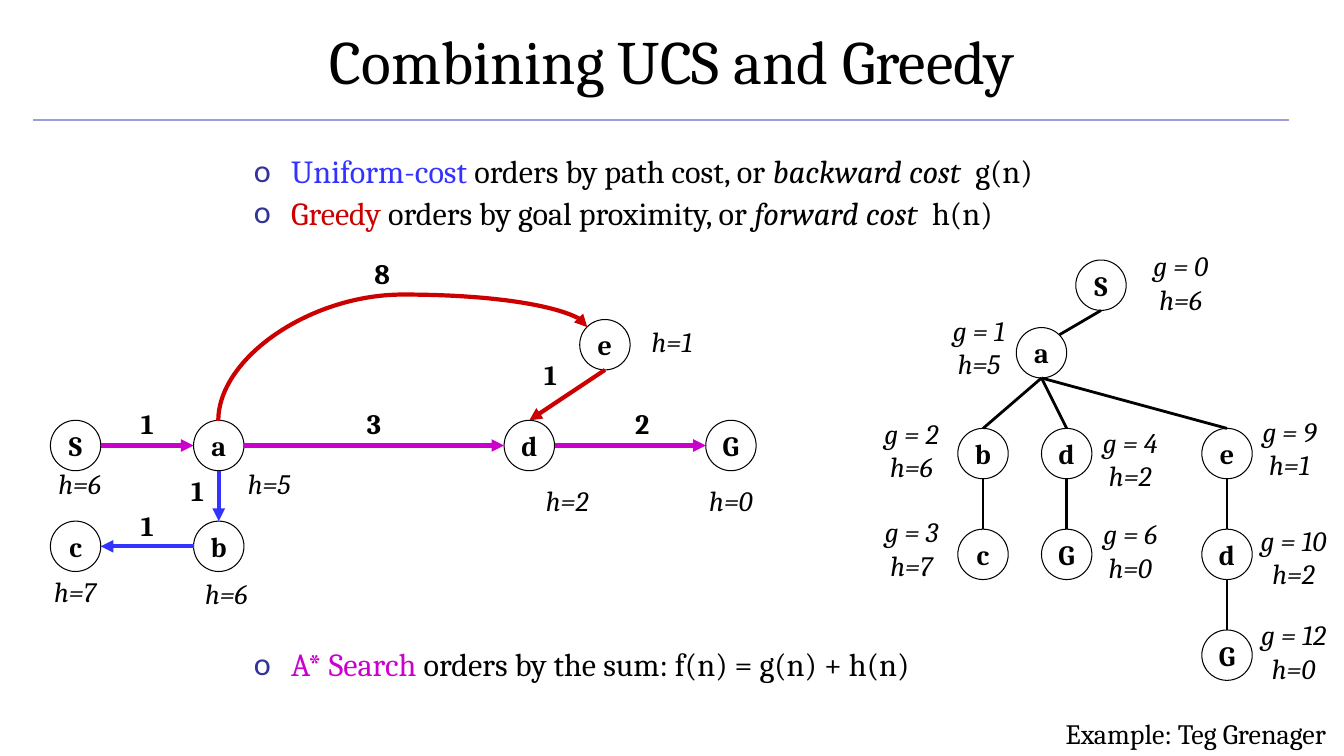
from dataclasses import dataclass

import pptx
import pptx.dml.color
import pptx.enum.shapes
import pptx.enum.text
import pptx.oxml
import pptx.oxml.ns
import pptx.util

Inches = pptx.util.Inches
Pt = pptx.util.Pt
Align = pptx.enum.text.PP_ALIGN
Anchor = pptx.enum.text.MSO_ANCHOR
Kind = pptx.enum.shapes.MSO_CONNECTOR


@dataclass(frozen=True)
class Theme:
    font: str = "Cambria"
    ink: str = "000000"
    paper: str = "FFFFFF"
    rule: str = "9C9CDF"
    bullet: str = "333399"
    blue: str = "3333FF"
    red: str = "CC0000"
    purple: str = "CC00CC"
    title: int = 44
    body: int = 23
    label: int = 20


THEME = Theme()
SIZE = 0.5  # diameter of a node
SIDES = {"top": (0, -0.25), "left": (-0.25, 0), "bottom": (0, 0.25),
         "right": (0.25, 0), "corner": (0.18, -0.18)}

# Nodes: left, top
GRAPH = {"S": (0.5, 4.17), "a": (1.92, 4.17), "d": (5, 4.17), "G": (7, 4.17),
         "c": (0.5, 5.17), "b": (1.92, 5.17), "e": (5.75, 3.17)}
ROWS = [4.25, 5.25, 6.25]
TREE = {"S": (10.67, 2.58), "a": (10.08, 3.25),
        "b": (9.5, ROWS[0]), "b c": (9.5, ROWS[1]),
        "d": (10.33, ROWS[0]), "d G": (10.33, ROWS[1]),
        "e": (11.92, ROWS[0]), "e d": (11.92, ROWS[1]), "e G": (11.92, ROWS[2])}

# Arrows: from, side, to, side, colour
ARROWS = [("a", "bottom", "b", "top", THEME.blue),
          ("b", "left", "c", "right", THEME.blue),
          ("e", "bottom", "d", "top", THEME.red),
          ("S", "right", "a", "left", THEME.purple),
          ("a", "right", "d", "left", THEME.purple),
          ("d", "right", "G", "left", THEME.purple)]
LINKS = [("S", "a", "corner"), ("a", "b", "top"), ("a", "d", "top"),
         ("a", "e", "top"), ("b", "b c", "top"), ("d", "d G", "top"),
         ("e", "e d", "top"), ("e d", "e G", "top")]

# Labels: text, left, top, width
COSTS = [("1", 1.17, 3.98, 0.58), ("8", 3.58, 2.5, 0.42), ("1", 1.17, 5, 0.58),
         ("1", 1.67, 4.65, 0.58), ("2", 6.08, 3.98, 0.58),
         ("3", 3.42, 3.98, 0.58), ("1", 5.17, 3.5, 0.58)]
GUESSES = [("h=5", 2.17, 4.58, 1), ("h=6", 1.83, 5.67, 0.83),
           ("h=2", 5.25, 4.75, 0.75), ("h=6", 0.33, 4.58, 0.92),
           ("h=0", 6.75, 4.75, 1), ("h=7", 0.33, 5.65, 0.83),
           ("h=1", 6.25, 3.17, 0.83)]
SCORES = [("g = 0 h=6", 11.25, 2.42, 0.92), ("g = 1 h=5", 9.25, 3.06, 0.92),
          ("g = 2 h=6", 8.58, 4.08, 0.92), ("g = 3 h=7", 8.58, 5.06, 0.92),
          ("g = 4 h=2", 10.75, 4.17, 0.92), ("g = 6 h=0", 10.75, 5.08, 0.92),
          ("g = 9 h=1", 12.33, 4.06, 0.92), ("g = 10 h=2", 12.33, 5.14, 1),
          ("g = 12 h=0", 12.33, 6.08, 1)]

# Bullets: runs of text, colour, italic
POINTS = [
    [("Uniform-cost ", THEME.blue, False),
     ("orders by path cost, or ", THEME.ink, False),
     ("backward cost  ", THEME.ink, True), ("g(n)", THEME.ink, False)],
    [("Greedy ", THEME.red, False),
     ("orders by goal proximity, or ", THEME.ink, False),
     ("forward cost  ", THEME.ink, True), ("h(n)", THEME.ink, False)]]
SUM = [[("A* Search", THEME.purple, False),
        (" orders by the sum: f(n) = g(n) + h(n)", THEME.ink, False)]]


def rgb(code):
    return pptx.dml.color.RGBColor.from_string(code)


def element(tag, **attrs):
    item = pptx.oxml.parse_xml(f"<a:{tag} {pptx.oxml.ns.nsdecls('a')}/>")
    for key, value in attrs.items():
        item.set(key, value)
    return item


def add_run(para, text, size, color=THEME.ink, bold=False, italic=False):
    run = para.add_run()
    run.text = text
    font = run.font
    font.name, font.size = THEME.font, Pt(size)
    font.bold, font.italic = bold, italic
    font.color.rgb = rgb(color)


def add_box(slide, left, top, width, height):
    box = slide.shapes.add_textbox(*map(Inches, (left, top, width, height)))
    box.text_frame.word_wrap = True
    return box.text_frame


def add_label(slide, text, left, top, width, height=0.43, align=Align.CENTER, **style):
    para = add_box(slide, left, top, width, height).paragraphs[0]
    para.alignment = align
    add_run(para, text, THEME.label, **style)


def add_list(slide, points, top, height):
    frame = add_box(slide, 2.42, top, 9, height)
    for i, runs in enumerate(points):
        para = frame.add_paragraph() if i else frame.paragraphs[0]
        para.line_spacing = 0.9
        if i:
            para.space_before = Pt(4.6)
        props = para._p.get_or_add_pPr()
        props.set("marL", str(Inches(0.37)))
        props.set("indent", str(-Inches(0.37)))
        tint = element("buClr")
        tint.append(element("srgbClr", val=THEME.bullet))
        props.extend([tint, element("buFont", typeface="+mn-lt"),
                      element("buChar", char="o")])
        for text, color, italic in runs:
            add_run(para, text, THEME.body, color, italic=italic)


def add_node(slide, name, left, top):
    node = slide.shapes.add_shape(
        pptx.enum.shapes.MSO_SHAPE.OVAL, *map(Inches, (left, top, SIZE, SIZE)))
    node.shadow.inherit = False
    node.fill.solid()
    node.fill.fore_color.rgb = rgb(THEME.paper)
    node.line.color.rgb = rgb(THEME.ink)
    node.line.width = Pt(0.75)
    frame = node.text_frame
    frame.word_wrap = False
    frame.vertical_anchor = Anchor.MIDDLE
    frame.paragraphs[0].alignment = Align.CENTER
    add_run(frame.paragraphs[0], name, THEME.label, bold=True)


def add_line(slide, start, end, color, width, arrow=False, kind=Kind.STRAIGHT):
    line = slide.shapes.add_connector(kind, *map(Inches, (*start, *end)))
    line.line.color.rgb = rgb(color)
    line.line.width = Pt(width)
    if arrow:
        line.line._get_or_add_ln().append(element("tailEnd", type="triangle"))
    line._element.spPr.append(element("effectLst"))
    return line


def add_curve(slide):
    """Arc from a to e: a curved connector turned a quarter to the left."""
    curve = add_line(slide, (3.53, 1.88), (4.46, 5.54), THEME.red, 3, True, Kind.CURVE)
    props = curve._element.spPr
    props.find(pptx.oxml.ns.qn("a:xfrm")).set("rot", str(270 * 60000))
    shape = props.find(pptx.oxml.ns.qn("a:prstGeom"))
    shape.get_or_add_avLst().append(element("gd", name="adj1", fmla="val 134800"))


def port(spot, side):
    return tuple(at + SIZE / 2 + step for at, step in zip(spot, SIDES[side]))


def main():
    deck = pptx.Presentation()
    deck.slide_width, deck.slide_height = Inches(13.33), Inches(7.5)
    slide = deck.slides.add_slide(deck.slide_layouts[5])

    # Title and rule
    title = slide.shapes.title
    title.left, title.top = Inches(0), Inches(-0.03)
    title.width, title.height = Inches(13.33), Inches(1.25)
    title.text_frame.vertical_anchor = Anchor.MIDDLE
    title.text_frame.paragraphs[0].alignment = Align.CENTER
    add_run(title.text_frame.paragraphs[0], "Combining UCS and Greedy", THEME.title)
    add_line(slide, (0.33, 1.19), (12.78, 1.19), THEME.rule, 1)

    # Bullets above and below the graph
    add_list(slide, POINTS, 1.5, 0.9)
    add_list(slide, SUM, 6.39, 0.5)

    # Nodes of graph and tree
    for nodes in (GRAPH, TREE):
        for name, spot in nodes.items():
            add_node(slide, name[-1], *spot)

    # Arrows of the graph
    for tail, out, head, into, color in ARROWS:
        add_line(slide, port(GRAPH[tail], out), port(GRAPH[head], into), color, 3, True)
    add_curve(slide)

    # Links of the tree
    for above, below, side in LINKS:
        add_line(slide, port(TREE[above], "bottom"), port(TREE[below], side), THEME.ink, 2)

    # Costs and heuristics
    for cost in COSTS:
        add_label(slide, *cost, bold=True)
    for guess in GUESSES:
        add_label(slide, *guess, italic=True)
    for score in SCORES:
        add_label(slide, *score, height=0.77, italic=True)

    # Credit
    add_label(slide, "Example: Teg Grenager", 10.17, 7.06, 3.08, align=Align.RIGHT)
    deck.save("out.pptx")


if __name__ == "__main__":
    main()
